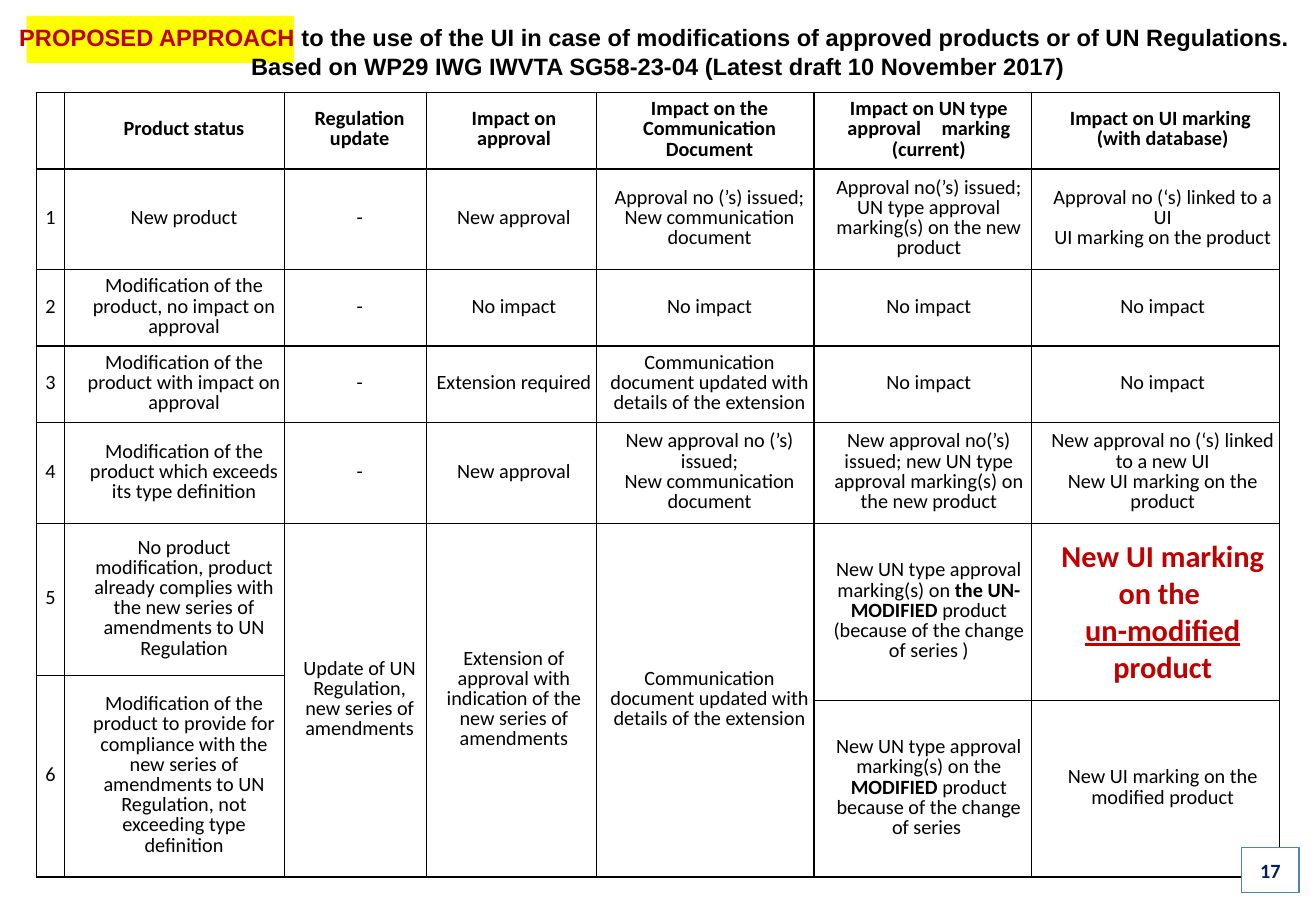
from dataclasses import dataclass

from lxml.etree import SubElement
from pptx import Presentation
from pptx.dml.color import RGBColor
from pptx.enum.shapes import MSO_SHAPE
from pptx.enum.text import MSO_ANCHOR, MSO_AUTO_SIZE, PP_ALIGN
from pptx.oxml.ns import qn
from pptx.util import Inches, Pt


@dataclass(frozen=True)
class Theme:
    black: str = "000000"
    white: str = "FFFFFF"
    red: str = "C00000"
    yellow: str = "FFFF00"
    navy: str = "002060"
    blue: str = "4F81BD"
    title_font: str = "Arial"
    body_font: str = "Calibri"
    title_size: int = 14
    body_size: int = 12
    alert_size: int = 18
    thin_line: float = 1
    header_line: float = 1.5


THEME = Theme()
COLUMN_WIDTHS = [0.23, 1.81, 1.17, 1.4, 1.79, 1.79, 2.04]
COLUMN_INDENTS = [0, 0.16, 0.07, 0.04, 0.07, 0.1, 0.12]
ROW_HEIGHTS = [0.63, 0.83, 0.63, 0.63, 0.83, 1.25, 0.21, 1.45]
MERGES = [
    ((5, 2), (7, 2)),
    ((5, 3), (7, 3)),
    ((5, 4), (7, 4)),
    ((5, 5), (6, 5)),
    ((5, 6), (6, 6)),
    ((6, 0), (7, 0)),
    ((6, 1), (7, 1)),
]
ALERT_CELL = (5, 6)

# fmt: off
ROWS = [
    [[], ["Product status"], ["Regulation update"], ["Impact on approval"],
     ["Impact on the Communication Document"],
     ["Impact on UN type approval　marking (current)"],
     ["Impact on UI marking \n(with database)"]],
    [["1"], ["New product"], ["-"], ["New approval"],
     ["Approval no (’s) issued;", "New communication document"],
     ["Approval no(’s) issued;\nUN type approval marking(s) on the new product"],
     ["Approval no (‘s) linked to a UI", "UI marking on the product"]],
    [["2"], ["Modification of the product, no impact on approval"], ["-"],
     ["No impact"], ["No impact"], ["No impact"], ["No impact"]],
    [["3"], ["Modification of the product with impact on approval"], ["-"],
     ["Extension required"],
     ["Communication document updated with details of the extension"],
     ["No impact"], ["No impact"]],
    [["4"], ["Modification of the product which exceeds its type definition"], ["-"],
     ["New approval"],
     ["New approval no (’s) issued;", "New communication document"],
     ["New approval no(’s) issued; new UN type approval marking(s) on the new product"],
     ["New approval no (‘s) linked to a new UI", "New UI marking on the product"]],
    [["5"],
     ["No product modification, product already complies with the new series of "
      "amendments to UN Regulation"],
     ["Update of UN Regulation,", "new series of amendments"],
     ["Extension of approval with indication of the new series of amendments"],
     ["Communication document updated with details of the extension"],
     ["New UN type approval marking(s) on *the UN-MODIFIED* product "
      "(because of the change of series )"],
     ["New UI marking on the ", "*un-modified* product"]],
    [["6"],
     ["Modification of the product to provide for compliance with the new series of "
      "amendments to UN Regulation, not exceeding type definition"],
     [], [], [], [], []],
    [[], [], [], [], [],
     ["New UN type approval marking(s) on the *MODIFIED* product because of the "
      "change of series "],
     ["New UI marking on the modified product"]],
]
# fmt: on


def add_run(paragraph, text, size, color, font=THEME.body_font, bold=False, underline=False):
    run = paragraph.add_run()
    run.text = text
    run.font.name = font
    run.font.size = Pt(size)
    run.font.bold = bold
    run.font.underline = underline
    run.font.color.rgb = RGBColor.from_string(color)


def add_box(slide, left, top, width, height, fill):
    shape = slide.shapes.add_shape(
        MSO_SHAPE.RECTANGLE, Inches(left), Inches(top), Inches(width), Inches(height)
    )
    shape.shadow.inherit = False
    shape.fill.solid()
    shape.fill.fore_color.rgb = RGBColor.from_string(fill)
    shape.line.fill.background()
    return shape


def add_title(slide, left, top, width, height):
    title = slide.shapes.title
    title.left, title.top = Inches(left), Inches(top)
    title.width, title.height = Inches(width), Inches(height)
    frame = title.text_frame
    frame.word_wrap = True
    frame.auto_size = MSO_AUTO_SIZE.NONE
    frame.vertical_anchor = MSO_ANCHOR.MIDDLE
    lines = [
        [
            ("PROPOSED APPROACH ", THEME.red),
            ("to the use of the UI in case of modifications of approved products "
             "or of UN Regulations. ", THEME.black),
        ],
        [("Based on WP29 IWG IWVTA SG58-23-04 (Latest draft 10 November 2017)", THEME.black)],
    ]
    for index, line in enumerate(lines):
        paragraph = frame.add_paragraph() if index else frame.paragraphs[0]
        paragraph.alignment = PP_ALIGN.CENTER
        for text, color in line:
            add_run(paragraph, text, THEME.title_size, color, THEME.title_font, True)
    highlight = add_box(slide, left + 0.22, top - 0.01, 2.2, 0.39, THEME.yellow)
    title._element.addprevious(highlight._element)


def set_borders(cell, row):
    properties = cell._tc.get_or_add_tcPr()
    heavy_side = {0: "lnB", 1: "lnT"}.get(row)
    for side in ("lnL", "lnR", "lnT", "lnB"):
        width = THEME.header_line if side == heavy_side else THEME.thin_line
        line = SubElement(properties, qn(f"a:{side}"), w=str(Pt(width)))
        fill = SubElement(line, qn("a:solidFill"))
        SubElement(fill, qn("a:srgbClr"), val=THEME.black)


def fill_cell(cell, paragraphs, indent, header, alert):
    cell.margin_left = cell.margin_top = cell.margin_right = Inches(0.01)
    cell.margin_bottom = 0
    cell.vertical_anchor = MSO_ANCHOR.MIDDLE
    size = THEME.alert_size if alert else THEME.body_size
    color = THEME.red if alert else THEME.black
    for index, text in enumerate(paragraphs):
        frame = cell.text_frame
        paragraph = frame.add_paragraph() if index else frame.paragraphs[0]
        paragraph.alignment = PP_ALIGN.CENTER
        paragraph._p.get_or_add_pPr().set("marL", str(Inches(indent)))
        if not alert:
            paragraph.line_spacing = Pt(THEME.body_size)
        for line_index, line in enumerate(text.split("\n")):
            if line_index:
                paragraph.add_line_break()
            for part_index, part in enumerate(line.split("*")):
                marked = part_index % 2 == 1
                if part:
                    add_run(paragraph, part, size, color,
                            bold=header or alert or marked, underline=alert and marked)


def add_impact_table(slide, left, top, width, height):
    table = slide.shapes.add_table(
        len(ROW_HEIGHTS), len(COLUMN_WIDTHS),
        Inches(left), Inches(top), Inches(width), Inches(height),
    ).table
    table.first_row = False
    table.horz_banding = False
    for column, column_width in zip(table.columns, COLUMN_WIDTHS):
        column.width = Inches(column_width)
    for row, row_height in zip(table.rows, ROW_HEIGHTS):
        row.height = Inches(row_height)
    for start, end in MERGES:
        table.cell(*start).merge(table.cell(*end))
    for row, texts in enumerate(ROWS):
        for column, paragraphs in enumerate(texts):
            cell = table.cell(row, column)
            set_borders(cell, row)
            cell.fill.background()
            fill_cell(cell, paragraphs, COLUMN_INDENTS[column],
                      row == 0, (row, column) == ALERT_CELL)


def add_page_number(slide, left, top, width, height):
    box = add_box(slide, left, top, width, height, THEME.white)
    box.line.color.rgb = RGBColor.from_string(THEME.blue)
    box.line.width = Pt(0.75)
    box.text_frame.vertical_anchor = MSO_ANCHOR.MIDDLE
    paragraph = box.text_frame.paragraphs[0]
    paragraph.alignment = PP_ALIGN.CENTER
    add_run(paragraph, "17", THEME.body_size, THEME.navy, bold=True)


def main():
    presentation = Presentation()
    presentation.slide_width, presentation.slide_height = Inches(10.83), Inches(7.5)
    slide = presentation.slides.add_slide(presentation.slide_layouts[5])
    add_title(slide, 0, 0.14, 10.83, 0.57)
    add_impact_table(slide, 0.3, 0.76, sum(COLUMN_WIDTHS), sum(ROW_HEIGHTS))
    add_page_number(slide, 10.22, 6.98, 0.47, 0.37)
    presentation.save("out.pptx")


if __name__ == "__main__":
    main()
